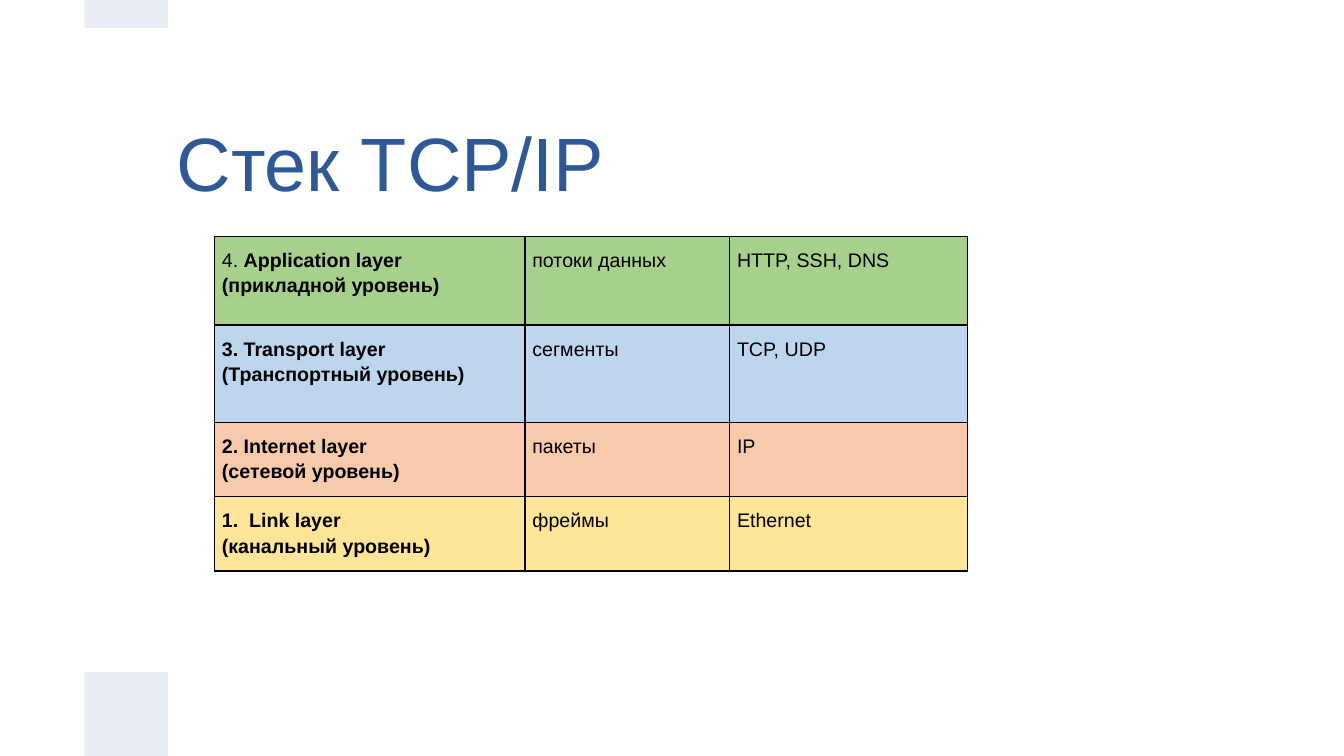
from dataclasses import dataclass

from lxml.etree import SubElement
from pptx import Presentation
from pptx.dml.color import RGBColor
from pptx.enum.shapes import MSO_SHAPE
from pptx.enum.text import MSO_ANCHOR
from pptx.oxml.ns import qn
from pptx.util import Pt


@dataclass(frozen=True)
class Theme:
    font: str = "Arial"
    title_size: float = 54
    body_size: float = 14
    title_color: str = "2F5897"
    ink: str = "000000"
    accent: str = "E9EDF4"
    application: str = "A8D08D"
    transport: str = "BDD6EE"
    internet: str = "F7CAAC"
    link: str = "FFE599"


THEME = Theme()


def add_text(paragraph, text, *, size, color, bold=False, spacing=1.0):
    paragraph.line_spacing = spacing
    run = paragraph.add_run()
    run.text = text
    run.font.name = THEME.font
    run.font.size = Pt(size)
    run.font.bold = bold
    run.font.color.rgb = RGBColor.from_string(color)


class SlideBuilder:
    def __init__(self, slide, theme):
        self.slide = slide
        self.theme = theme

    def block(self, left, top, width, height):
        block = self.slide.shapes.add_shape(
            MSO_SHAPE.RECTANGLE, Pt(left), Pt(top), Pt(width), Pt(height))
        block.shadow.inherit = False
        block.fill.solid()
        block.fill.fore_color.rgb = RGBColor.from_string(self.theme.accent)
        block.line.fill.background()

    def title(self, text, left, top, width, height):
        frame = self.slide.shapes.add_textbox(
            Pt(left), Pt(top), Pt(width), Pt(height)).text_frame
        frame.word_wrap = True
        frame.vertical_anchor = MSO_ANCHOR.MIDDLE
        frame.margin_left = frame.margin_right = Pt(7.2)
        frame.margin_top = frame.margin_bottom = Pt(7.2)
        add_text(frame.paragraphs[0], text, size=self.theme.title_size,
                 color=self.theme.title_color, spacing=0.9)

    def table(self, left, top, widths, layers):
        heights = [height for height, _, _ in layers]
        grid = self.slide.shapes.add_table(
            len(layers), len(widths), Pt(left), Pt(top),
            Pt(sum(widths)), Pt(sum(heights))).table
        grid.first_row = grid.horz_banding = False
        for column, width in zip(grid.columns, widths):
            column.width = Pt(width)
        for row, (height, fill, texts) in zip(grid.rows, layers):
            row.height = Pt(height)
            for cell, paragraphs in zip(row.cells, texts):
                self.cell(cell, paragraphs, fill)

    def cell(self, cell, paragraphs, fill):
        cell.margin_left = cell.margin_right = Pt(5.3)
        cell.margin_top = cell.margin_bottom = Pt(7.2)
        frame = cell.text_frame
        for index, runs in enumerate(paragraphs):
            paragraph = frame.add_paragraph() if index else frame.paragraphs[0]
            for text, bold in runs:
                add_text(paragraph, text, size=self.theme.body_size,
                         color=self.theme.ink, bold=bold, spacing=1.15)
        self.borders(cell)
        cell.fill.solid()
        cell.fill.fore_color.rgb = RGBColor.from_string(fill)

    def borders(self, cell):
        properties = cell._tc.get_or_add_tcPr()
        for side in ("a:lnL", "a:lnR", "a:lnT", "a:lnB"):
            border = SubElement(properties, qn(side), w=str(Pt(1)))
            solid = SubElement(border, qn("a:solidFill"))
            SubElement(solid, qn("a:srgbClr"), val=self.theme.ink)


def plain(text):
    return [[(text, False)]]


def strong(*lines):
    return [[(line, True)] for line in lines]


def main():
    presentation = Presentation()
    presentation.slide_width = Pt(960)
    presentation.slide_height = Pt(540)
    slide = presentation.slides.add_slide(presentation.slide_layouts[6])
    builder = SlideBuilder(slide, THEME)

    for top, height in ((0, 20), (480, 60)):
        builder.block(60.5, top, 59.5, height)
    builder.title("Стек TCP/IP", 119, 60, 722, 119)

    application = [[("4. ", False), ("Application layer (прикладной уровень)", True)]]
    layers = [
        (63.4, THEME.application,
         (application, plain("потоки данных"), plain("HTTP, SSH, DNS"))),
        (69.6, THEME.transport,
         (strong("3. Transport layer (Транспортный уровень)"),
          plain("сегменты"), plain("TCP, UDP"))),
        (52, THEME.internet,
         (strong("2. Internet layer", "(сетевой уровень)"),
          plain("пакеты"), plain("IP"))),
        (52, THEME.link,
         (strong("1.  Link layer", "(канальный уровень)"),
          plain("фреймы"), plain("Ethernet"))),
    ]
    builder.table(153.2, 168.8, (221.8, 146.2, 170), layers)
    presentation.save("out.pptx")


if __name__ == "__main__":
    main()
